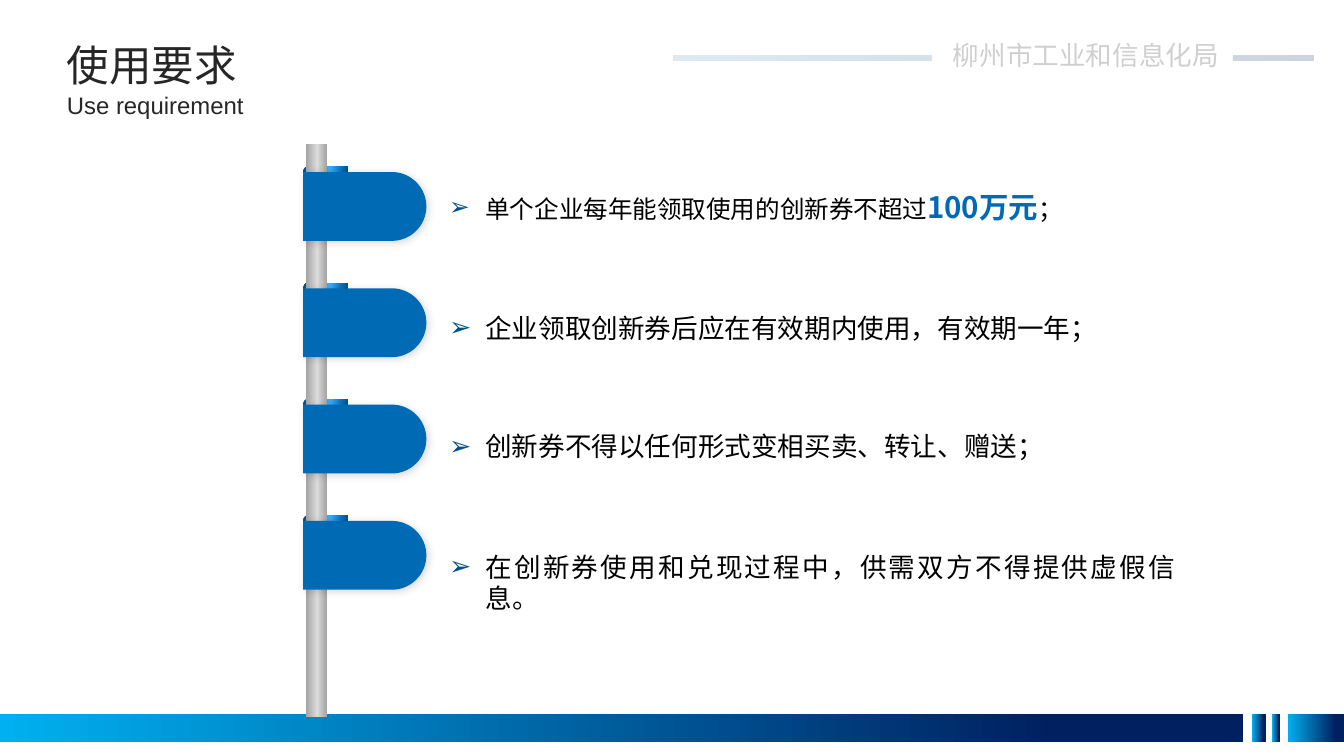
from lxml import etree
from pptx import Presentation
from pptx.dml.color import RGBColor
from pptx.enum.shapes import MSO_SHAPE
from pptx.enum.text import PP_ALIGN
from pptx.oxml.ns import qn
from pptx.util import Inches, Pt

RECT = MSO_SHAPE.RECTANGLE
JUSTIFY = PP_ALIGN.JUSTIFY
W, H = 14.06, 7.91
BEZIER = 0.55
SANS, CJK, CJK_HEAD = "Arial", "Noto Sans CJK SC", "Noto Sans CJK JP"
C = {"title": "262626", "text": "000000", "blue": "006AB5", "deep": "005088",
     "fold": "004F88", "shine": "3AADFF", "sky": "00B0F0", "navy": "002060",
     "steel": "A3A3A3", "silver": "DBDBDB"}
BAND = [(0, "sky", 100), (85, "navy", 100)]
FOLD = [(0, "fold", 100), (60, "shine", 100), (89, "blue", 100), (100, "fold", 100)]
POLE = [(0, "steel", 100), (54, "silver", 100), (100, "steel", 100)]
RULES = [(0, "deep", 13), (100, "navy", 20)]
ITEMS = [
    (0.42, 6.69, [("单个企业每年能领取使用的创新券不超过", 18.5, "text", False),
                  ("100万元", 22.2, "blue", True), ("；", 18.5, "text", False)]),
    (1.7, 7.24, [("企业领取创新券后应在有效期内使用，有效期一年；", 20, "text", False)]),
    (2.94, 7, [("创新券不得以任何形式变相买卖、转让、赠送；", 20, "text", False)]),
    (4.2, 7.79, [("在创新券使用和兑现过程中，供需双方不得提供虚假信息。", 20, "text", False)]),
]


def sub(parent, tag, **attrs):
    """Append a drawing element with its attributes."""
    el = etree.SubElement(parent, qn(tag))
    for name, value in attrs.items():
        el.set(name, str(value))
    return el


def color_el(parent, name, alpha):
    """Append a colour with opacity in percent."""
    sub(sub(parent, "a:srgbClr", val=C[name]), "a:alpha", val=alpha * 1000)


def paint(sp, fill):
    """Fill a shape with a named colour or a list of gradient stops."""
    sp.shadow.inherit = False
    sp.line.fill.background()
    if isinstance(fill, str):
        sp.fill.solid()
        sp.fill.fore_color.rgb = RGBColor.from_string(C[fill])
        return
    sp.fill.gradient()
    sp.fill.gradient_angle = 0
    stops = sp._element.spPr.find(qn("a:gradFill")).find(qn("a:gsLst"))
    for stop in list(stops):
        stops.remove(stop)
    for pos, name, alpha in fill:
        color_el(sub(stops, "a:gs", pos=pos * 1000), name, alpha)


def bar(s, x, y, w, h, fill):
    """Draw a plain rectangle."""
    paint(s.shapes.add_shape(RECT, Inches(x), Inches(y), Inches(w), Inches(h)), fill)


def outline(s, contours, fill):
    """Draw closed contours as one freeform."""
    contours = [[(Inches(x), Inches(y)) for x, y in c] for c in contours]
    fb = s.shapes.build_freeform(*contours[0][0])
    fb.add_line_segments(contours[0][1:], close=True)
    for c in contours[1:]:
        fb.move_to(*c[0])
        fb.add_line_segments(c[1:], close=True)
    sp = fb.convert_to_shape()
    paint(sp, fill)
    return sp


def curve(lines):
    """Merge three line segments into one cubic curve."""
    first, *others = lines
    first.tag = qn("a:cubicBezTo")
    for line in others:
        first.append(line[0])
        line.getparent().remove(line)


def half_pill(s, x, y, w, h, fill, side):
    """Draw a bar rounded at its right (side 1) or left (side -1) end."""
    r = h / 2
    flat, tip = (x, x + w) if side > 0 else (x + w, x)
    center, k = tip - side * r, BEZIER * r
    sp = outline(s, [[(flat, y), (center, y),
                      (center + side * k, y), (tip, y + r - k), (tip, y + r),
                      (tip, y + r + k), (center + side * k, y + h), (center, y + h),
                      (flat, y + h)]], fill)
    lines = list(sp._element.iter(qn("a:lnTo")))
    curve(lines[1:4])
    curve(lines[4:7])
    return sp


def rect_points(x, y, w, h):
    """List the corners of a rectangle."""
    return [(x, y), (x + w, y), (x + w, y + h), (x, y + h)]


def text_box(s, x, y, w, h, runs, latin, asian, inset=True):
    """Place one paragraph of formatted runs and return it."""
    tf = s.shapes.add_textbox(Inches(x), Inches(y), Inches(w), Inches(h)).text_frame
    tf.word_wrap = True
    if not inset:
        tf.margin_left = tf.margin_right = tf.margin_top = tf.margin_bottom = 0
    p = tf.paragraphs[0]
    for text, size, color, bold in runs:
        r = p.add_run()
        r.text = text
        r.font.size, r.font.bold, r.font.name = Pt(size), bold, latin
        r.font.color.rgb = RGBColor.from_string(C[color])
        sub(r._r.get_or_add_rPr(), "a:ea", typeface=asian)
    return p


def header(s, x, y, w):
    """Place the titles at the left and the office name between two rules."""
    text_box(s, x, y, 3.91, 0.54, [("使用要求", 32, "title", False)], SANS, CJK, False)
    text_box(s, x, y + 0.54, 3.91, 0.3, [("Use requirement", 18, "title", False)],
             SANS, CJK, False)
    p = text_box(s, x + w - 3.87, y - 0.05, 3.07, 0.44,
                 [("柳州市工业和信息化局", 20, "text", False)], CJK_HEAD, CJK_HEAD)
    clr = p.runs[0]._r.rPr.find(qn("a:solidFill"))[0]
    sub(clr, "a:alpha", val=19000)
    outline(s, [rect_points(x + w - 0.85, y + 0.17, 0.85, 0.05),
                rect_points(x + w - 6.69, y + 0.17, 2.7, 0.05)], RULES)


def footer(s, y, h):
    """Draw the bottom band and its three end blocks."""
    for x, w in [(0, 13), (13.1, 0.14), (13.31, 0.08), (13.47, W - 13.47)]:
        bar(s, x, y, w, h, BAND)


def signpost(s, x, y, h):
    """Draw the pole with one flag and one bullet per requirement."""
    pitch, flag_h = 3.65 / 3, 0.72
    rows = [y + 0.23 + i * pitch for i in range(len(ITEMS))]
    for top in rows:
        half_pill(s, x, top, 0.47, 0.12, FOLD, -1)
    bar(s, x + 0.03, y, 0.22, h, POLE)
    for top in rows:
        flag = half_pill(s, x, top + 0.06, 1.29, flag_h, "blue", 1)
        effects = flag._element.spPr.find(qn("a:effectLst"))
        shadow = sub(effects, "a:outerShdw", blurRad=Pt(6), dist=Pt(2),
                     dir=45 * 60000, algn="tl", rotWithShape=0)
        color_el(shadow, "text", 15)
    for dy, w, runs in ITEMS:
        p = text_box(s, x + 1.43, y + dy, w, flag_h, runs, CJK, CJK)
        p.alignment = JUSTIFY
        pPr = p._p.get_or_add_pPr()
        pPr.set("marL", str(Inches(0.38)))
        pPr.set("indent", str(-Inches(0.38)))
        pPr.set("hangingPunct", "0")
        sub(sub(pPr, "a:buClr"), "a:srgbClr", val=C["deep"])
        sub(pPr, "a:buFont", typeface=SANS)
        sub(pPr, "a:buChar", char="➢")


def main():
    """Build the slide and save it."""
    prs = Presentation()
    prs.slide_width, prs.slide_height = Inches(W), Inches(H)
    s = prs.slides.add_slide(prs.slide_layouts[6])
    header(s, 0.7, 0.41, 13.04)
    footer(s, 7.47, 0.29)
    signpost(s, 3.17, 1.51, 5.99)
    prs.save("out.pptx")


if __name__ == "__main__":
    main()
